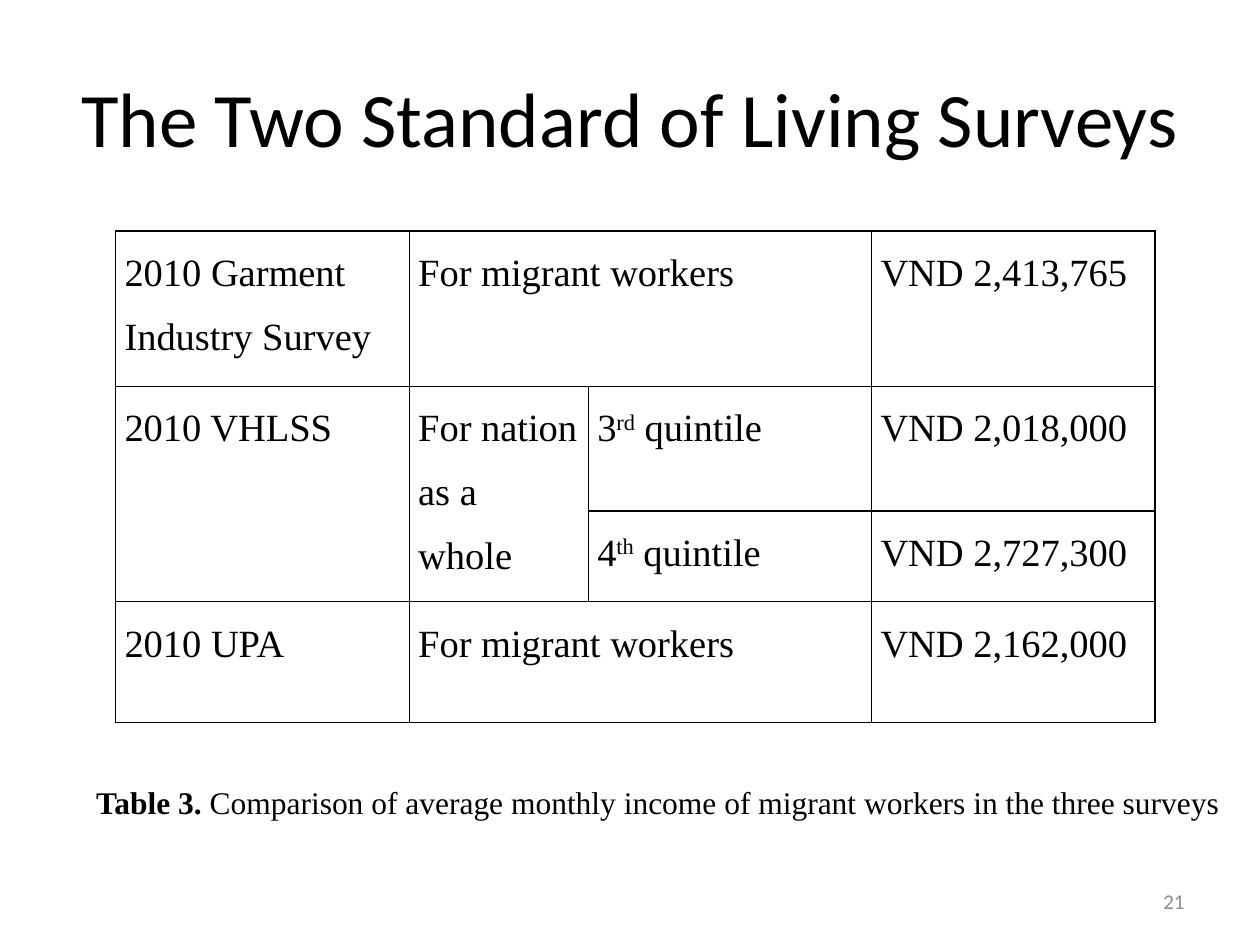
"""Build a slide comparing average monthly income across three surveys."""
from lxml import etree
from pptx import Presentation
from pptx import util as u
from pptx.dml import color
from pptx.enum import text
from pptx.oxml import ns

SERIF = "Times New Roman"
COLUMNS = [5.92, 3.61, 5.71, 5.71]
ROWS = [3.13, 2.51, 1.83, 2.44]
MERGES = [((0, 1), (0, 2)), ((1, 0), (2, 0)), ((1, 1), (2, 1)), ((3, 1), (3, 2))]
CELLS = {
    (0, 0): ["2010 Garment Industry Survey"],
    (0, 1): ["For migrant workers"],
    (0, 3): ["VND 2,413,765"],
    (1, 0): ["2010 VHLSS"],
    (1, 1): ["For nation as a whole"],
    (1, 2): ["3", "rd", " quintile"],
    (1, 3): ["VND 2,018,000"],
    (2, 2): ["4", "th", " quintile"],
    (2, 3): ["VND 2,727,300"],
    (3, 0): ["2010 UPA"],
    (3, 1): ["For migrant workers"],
    (3, 3): ["VND 2,162,000"],
}


def rgb(value):
    return color.RGBColor.from_string(value)


def apply(target, values):
    for name, value in values.items():
        setattr(target, name, value)


class SlideBuilder:
    def __init__(self, presentation):
        self.slide = presentation.slides.add_slide(presentation.slide_layouts[5])
        self.ink = "000000"
        self.muted = "8C8C8C"
        self.cell_margins = {"margin_left": u.Cm(0.18), "margin_right": u.Cm(0.18),
                             "margin_top": 0, "margin_bottom": 0}
        self.cell_spacing = {"line_spacing": 1.5, "space_after": u.Pt(10)}

    def place(self, shape, left, top, width, height):
        apply(shape, {"left": u.Cm(left), "top": u.Cm(top),
                      "width": u.Cm(width), "height": u.Cm(height)})

    def run(self, paragraph, content, size, font, ink=None, bold=False):
        run = paragraph.add_run()
        run.text = content
        apply(run.font, {"name": font, "size": u.Pt(size), "bold": bold})
        run.font.color.rgb = rgb(ink or self.ink)
        return run

    def title(self, content, box):
        shape = self.slide.shapes.title
        self.place(shape, *box)
        shape.text_frame.vertical_anchor = text.MSO_ANCHOR.MIDDLE
        paragraph = shape.text_frame.paragraphs[0]
        paragraph.alignment = text.PP_ALIGN.CENTER
        self.run(paragraph, content, 44, "Calibri")

    def text_box(self, box, alignment, wrap=True):
        shape = self.slide.shapes.add_textbox(*map(u.Cm, box))
        apply(shape.text_frame, {"word_wrap": wrap,
                                 "vertical_anchor": text.MSO_ANCHOR.MIDDLE})
        paragraph = shape.text_frame.paragraphs[0]
        paragraph.alignment = alignment
        return shape, paragraph

    def page_number(self, content, box):
        _, paragraph = self.text_box(box, text.PP_ALIGN.RIGHT)
        self.run(paragraph, content, 12, "Calibri", self.muted)

    def caption(self, label, content, box):
        shape, paragraph = self.text_box(box, text.PP_ALIGN.LEFT, wrap=False)
        shape.text_frame.auto_size = text.MSO_AUTO_SIZE.SHAPE_TO_FIT_TEXT
        paragraph._p.get_or_add_pPr().set("indent", str(u.Cm(1.27)))
        self.run(paragraph, label, 18, SERIF, bold=True)
        self.run(paragraph, content, 18, SERIF)

    def borders(self, cell):
        properties = cell._tc.get_or_add_tcPr()
        for side in ("a:lnL", "a:lnR", "a:lnT", "a:lnB"):
            line = etree.SubElement(properties, ns.qn(side), w=str(u.Pt(1)))
            fill = etree.SubElement(line, ns.qn("a:solidFill"))
            etree.SubElement(fill, ns.qn("a:srgbClr"), val=self.ink)

    def table(self, left, top):
        frame = self.slide.shapes.add_table(
            len(ROWS), len(COLUMNS), u.Cm(left), u.Cm(top),
            u.Cm(sum(COLUMNS)), u.Cm(sum(ROWS)))
        table = frame.table
        apply(table, {"first_row": False, "horz_banding": False})
        for column, width in zip(table.columns, COLUMNS):
            column.width = u.Cm(width)
        for row, height in zip(table.rows, ROWS):
            row.height = u.Cm(height)
        for start, end in MERGES:
            table.cell(*start).merge(table.cell(*end))
        for cell in table.iter_cells():
            self.borders(cell)
            cell.fill.background()
            apply(cell, self.cell_margins)
        for position, parts in CELLS.items():
            paragraph = table.cell(*position).text_frame.paragraphs[0]
            apply(paragraph, self.cell_spacing)
            for index, part in enumerate(parts):
                run = self.run(paragraph, part, 22, SERIF)
                if index == 1:
                    run._r.get_or_add_rPr().set("baseline", "30000")


def main():
    presentation = Presentation()
    apply(presentation, {"slide_width": u.Cm(25.4), "slide_height": u.Cm(19.05)})
    builder = SlideBuilder(presentation)
    builder.title("The Two Standard of Living Surveys", (1.27, 0.76, 22.86, 3.18))
    builder.page_number("21", (18.2, 17.66, 5.93, 1.01))
    builder.table(2.33, 4.66)
    builder.caption(
        "Table 3. ",
        "Comparison of average monthly income of migrant workers in the three surveys",
        (0.42, 15.65, 24.7, 1.02))
    presentation.save("out.pptx")


if __name__ == "__main__":
    main()
